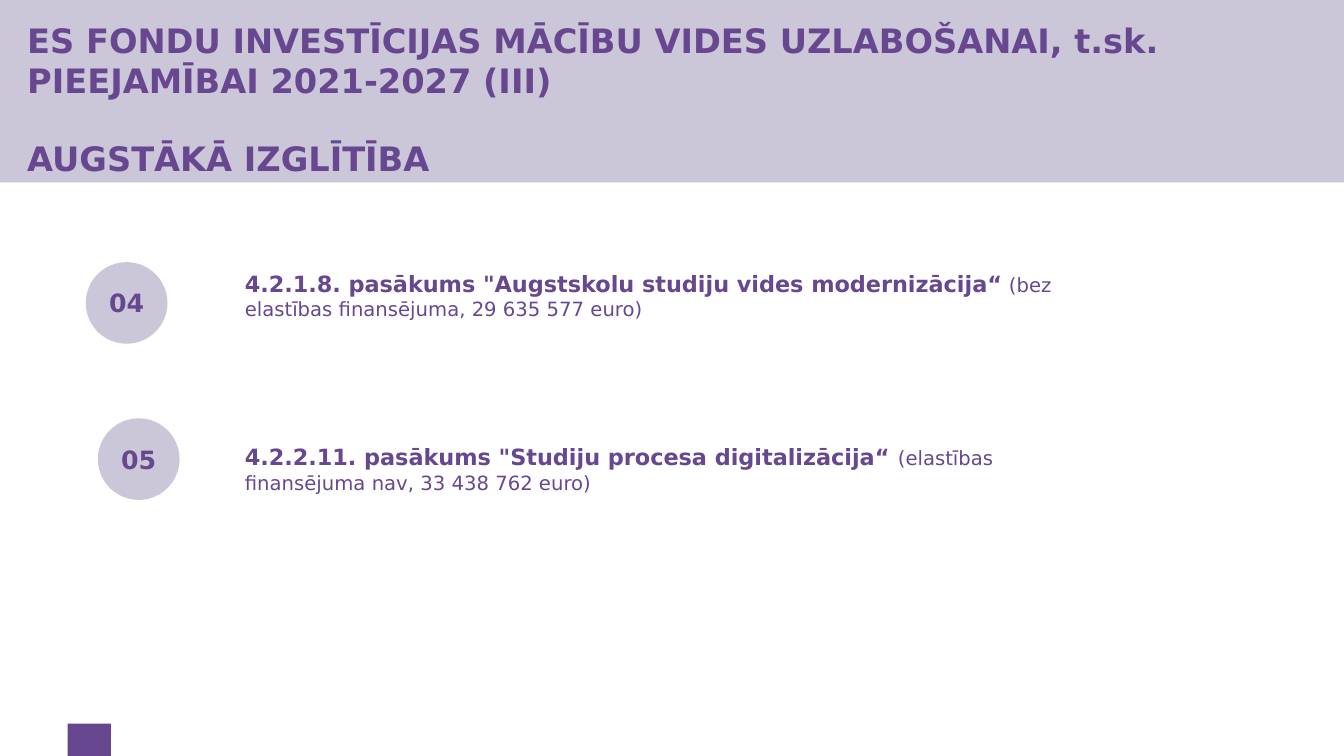
from dataclasses import dataclass

from pptx import Presentation
from pptx import util as u
from pptx.dml.color import RGBColor
from pptx.enum import shapes, text


@dataclass(frozen=True)
class Theme:
    accent: RGBColor = RGBColor(0x66, 0x47, 0x90)
    soft: RGBColor = RGBColor(0xCB, 0xC7, 0xD8)
    font: str = "DejaVu Sans"
    title: int = 24
    number: int = 18
    name: int = 16
    detail: int = 14


THEME = Theme()
WIDTH, HEIGHT = u.Inches(13.33), u.Inches(7.5)
COL, ROW = WIDTH / 100, HEIGHT / 100
TEXT_LEFT = 17.48
CIRCLE_W, CIRCLE_H = 6.08, 10.8

ITEMS = [
    ("04", '4.2.1.8. pasākums "Augstskolu studiju vides modernizācija“',
     " (bez elastības finansējuma, 29 635 577 euro)",
     (6.38, 34.67, 73.88, CIRCLE_H), 14.67, -1),
    ("05", '4.2.2.11. pasākums "Studiju procesa digitalizācija“ ',
     "(elastības finansējuma nav, 33 438 762 euro)",
     (7.28, 55.33, 75.08, CIRCLE_H), 8.53, 1.27),
]


def emu(box):
    x, y, w, h = box
    return round(x * COL), round(y * ROW), round(w * COL), round(h * ROW)


def add_block(s, kind, box, color):
    sp = s.shapes.add_shape(kind, *emu(box))
    sp.shadow.inherit = False
    sp.fill.solid()
    sp.fill.fore_color.rgb = color
    sp.line.fill.background()
    return sp


def add_label(s, box):
    tf = s.shapes.add_textbox(*emu(box)).text_frame
    tf.word_wrap = True
    tf.vertical_anchor = text.MSO_ANCHOR.MIDDLE
    return tf


def style(r, size, bold=True):
    r.font.name = THEME.font
    r.font.size = u.Pt(size)
    r.font.bold = bold
    r.font.color.rgb = THEME.accent


def add_header(s, box):
    x, y, w, h = box
    add_block(s, shapes.MSO_SHAPE.RECTANGLE, box, THEME.soft)
    tf = add_label(s, (x + 2.03, y + 3.73, w - 7.07, h - 5.33))
    tf.margin_left = 0
    tf.text = ("ES FONDU INVESTĪCIJAS MĀCĪBU VIDES UZLABOŠANAI, t.sk. "
               "PIEEJAMĪBAI 2021-2027 (III)\nAUGSTĀKĀ IZGLĪTĪBA")
    for p in tf.paragraphs:
        style(p.runs[0], THEME.title)
    tf.paragraphs[1].space_before = u.Pt(27)


def add_item(s, box, number, name, detail, text_h, shift):
    x, y, w, h = box
    circle = add_block(s, shapes.MSO_SHAPE.OVAL, (x, y, CIRCLE_W, h), THEME.soft)
    tf = circle.text_frame
    tf.margin_left = tf.margin_right = 0
    tf.vertical_anchor = text.MSO_ANCHOR.MIDDLE
    tf.text = number
    p = tf.paragraphs[0]
    p.alignment = text.PP_ALIGN.CENTER
    style(p.runs[0], THEME.number)

    text_y = y + (h - text_h) / 2 + shift
    tf = add_label(s, (TEXT_LEFT, text_y, x + w - TEXT_LEFT, text_h))
    p = tf.paragraphs[0]
    for words, size, bold in ((name, THEME.name, True), (detail, THEME.detail, False)):
        r = p.add_run()
        r.text = words
        style(r, size, bold)


def add_footer(s, box):
    add_block(s, shapes.MSO_SHAPE.RECTANGLE, box, THEME.accent)


def main():
    prs = Presentation()
    prs.slide_width, prs.slide_height = WIDTH, HEIGHT
    s = prs.slides.add_slide(prs.slide_layouts[6])
    add_header(s, (0, 0, 100, 24.13))
    add_footer(s, (5.03, 95.73, 3.23, 4.27))
    for number, name, detail, box, text_h, shift in ITEMS:
        add_item(s, box, number, name, detail, text_h, shift)
    prs.save("out.pptx")


if __name__ == "__main__":
    main()
